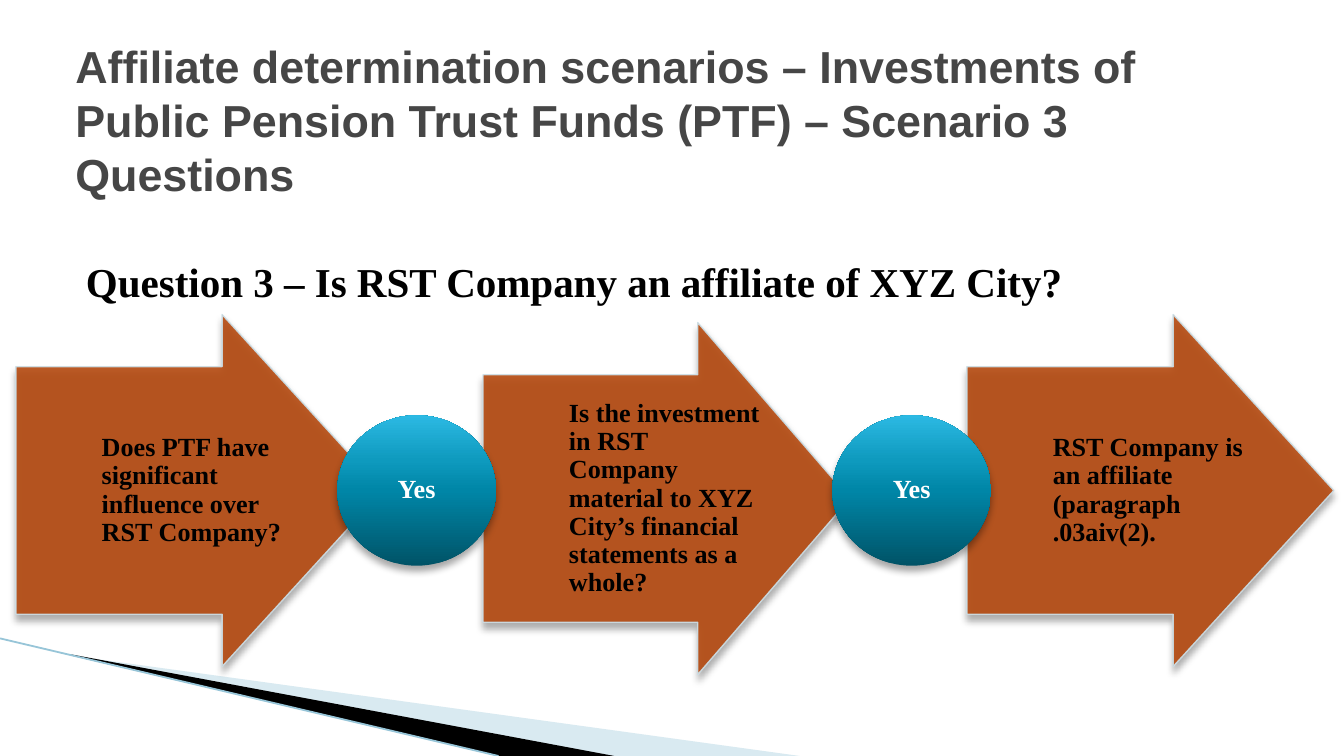
from dataclasses import dataclass

from lxml.etree import SubElement
from pptx import Presentation
from pptx.dml.color import RGBColor
from pptx.enum.shapes import MSO_CONNECTOR, MSO_SHAPE
from pptx.enum.text import MSO_ANCHOR, PP_ALIGN
from pptx.oxml import parse_xml
from pptx.oxml.ns import nsdecls, qn
from pptx.util import Pt


@dataclass(frozen=True)
class Theme:
    heading_font: str = "Arial"
    body_font: str = "Times New Roman"
    title_size: float = 24
    question_size: float = 22
    step_size: float = 14
    title: str = "464646"
    text: str = "000000"
    light_text: str = "FFFFFF"
    arrow: str = "B54A10"
    arrow_edge: str = "CDE0E8"
    pale_wedge: str = "A0CBDC"
    dark_wedge: str = "000000"
    edge_line: str = "97C5D8"
    shadow: str = "000000"
    sphere: tuple = ((0, "005367"), (50, "0086A7"), (70, "0E9ABE"), (100, "2CB9E3"))


class SlideBuilder:
    def __init__(self, slide, theme):
        self.slide = slide
        self.theme = theme

    def set_alpha(self, element, percent):
        color = next(element.iter(qn("a:srgbClr")))
        SubElement(color, qn("a:alpha")).set("val", str(percent * 1000))

    def add_shadow(self, shape):
        shape._element.spPr.append(parse_xml(
            f'<a:effectLst {nsdecls("a")}>'
            f'<a:outerShdw blurRad="{Pt(4)}" dist="{Pt(3)}" dir="5400000" rotWithShape="0">'
            f'<a:srgbClr val="{self.theme.shadow}"><a:alpha val="35000"/></a:srgbClr>'
            '</a:outerShdw></a:effectLst>'))

    def set_text(self, shape, text, font, size, color, margins, anchor=MSO_ANCHOR.TOP,
                 align=PP_ALIGN.LEFT, spacing=None):
        frame = shape.text_frame
        frame.text = text
        frame.word_wrap = True
        frame.vertical_anchor = anchor
        frame.margin_left, frame.margin_top, frame.margin_right, frame.margin_bottom = map(Pt, margins)
        paragraph = frame.paragraphs[0]
        paragraph.alignment = align
        if spacing:
            paragraph.line_spacing = spacing
        run_font = paragraph.runs[0].font
        run_font.name = font
        run_font.size = Pt(size)
        run_font.bold = True
        run_font.color.rgb = RGBColor.from_string(color)

    def text_box(self, left, top, width, height, text, font, size, color, margins):
        shape = self.slide.shapes.add_textbox(Pt(left), Pt(top), Pt(width), Pt(height))
        self.set_text(shape, text, font, size, color, margins)

    def polygon(self, points, color, opacity=100):
        corners = [(Pt(x), Pt(y)) for x, y in points]
        builder = self.slide.shapes.build_freeform(*corners[0])
        builder.add_line_segments(corners[1:], close=True)
        shape = builder.convert_to_shape()
        shape.shadow.inherit = False
        shape.fill.solid()
        shape.fill.fore_color.rgb = RGBColor.from_string(color)
        if opacity < 100:
            self.set_alpha(shape._element.spPr, opacity)
        shape.line.fill.background()
        return shape

    def line(self, start, end, color, width):
        connector = self.slide.shapes.add_connector(
            MSO_CONNECTOR.STRAIGHT, *map(Pt, (*start, *end)))
        connector.line.color.rgb = RGBColor.from_string(color)
        connector.line.width = Pt(width)
        SubElement(connector._element.spPr, qn("a:effectLst"))

    def arrow(self, left, top, shaft, text, inset):
        width, height, shoulder = 196.6, 188.6, 28
        right, bottom, neck = left + width, top + height, left + shaft
        shape = self.polygon([
            (left, top + shoulder), (neck, top + shoulder), (neck, top),
            (right, top + height / 2), (neck, bottom),
            (neck, bottom - shoulder), (left, bottom - shoulder),
        ], self.theme.arrow, 90)
        shape.line.color.rgb = RGBColor.from_string(self.theme.arrow_edge)
        shape.line.width = Pt(0.75)
        properties = shape._element.spPr
        self.set_alpha(properties.find(qn("a:ln")), 90)
        properties.remove(properties.find(qn("a:effectLst")))
        self.add_shadow(shape)
        self.set_text(shape, text, self.theme.body_font, self.theme.step_size, self.theme.text,
                      (46, inset, 47.5, inset), MSO_ANCHOR.MIDDLE, spacing=0.9)

    def answer(self, left, top, text):
        shape = self.slide.shapes.add_shape(
            MSO_SHAPE.OVAL, Pt(left), Pt(top), Pt(85), Pt(80.6))
        shape.line.fill.background()
        stops = "".join(f'<a:gs pos="{position * 1000}"><a:srgbClr val="{color}"/></a:gs>'
                        for position, color in self.theme.sphere)
        shape._element.spPr.find(qn("a:prstGeom")).addnext(parse_xml(
            f'<a:gradFill {nsdecls("a")} rotWithShape="1"><a:gsLst>{stops}</a:gsLst>'
            '<a:lin ang="16200000" scaled="0"/></a:gradFill>'))
        self.add_shadow(shape)
        self.set_text(shape, text, self.theme.body_font, self.theme.step_size,
                      self.theme.light_text, (1.5, 1.5, 1.5, 1.5), MSO_ANCHOR.MIDDLE,
                      PP_ALIGN.CENTER, 0.9)


def main():
    presentation = Presentation()
    presentation.slide_width = Pt(720)
    presentation.slide_height = Pt(405)
    theme = Theme()
    builder = SlideBuilder(presentation.slides.add_slide(presentation.slide_layouts[6]), theme)

    builder.polygon([(39.6, 351.4), (428.4, 405), (328.3, 405)], theme.pale_wedge, 40)
    builder.polygon([(38.2, 350.6), (329, 405), (267.8, 405), (38.9, 351.4)], theme.dark_wedge)
    builder.line((0, 342), (267, 405), theme.edge_line, 0.95)

    builder.text_box(
        40.4, 21, 612, 47,
        "Affiliate determination scenarios – Investments of Public Pension Trust Funds (PTF)"
        " – Scenario 3 Questions",
        theme.heading_font, theme.title_size, theme.title, (0, 0, 0, 0))
    builder.text_box(
        39, 134, 612, 260, "Question 3 – Is RST Company an affiliate of XYZ City?",
        theme.body_font, theme.question_size, theme.text, (7.2, 3.6, 7.2, 3.6))

    builder.arrow(8.5, 168.5, 110.5,
                  "Does PTF have significant influence over RST Company?", 23.8)
    builder.arrow(258.8, 172.8, 115,
                  "Is the investment in RST Company material to XYZ City’s financial"
                  " statements as a whole?", 22.3)
    builder.answer(180.7, 222.5, "Yes")
    builder.arrow(518, 168.5, 110.5,
                  "RST Company is an affiliate (paragraph .03aiv(2).", 23.8)
    builder.answer(445.9, 222.5, "Yes")

    presentation.save("out.pptx")


if __name__ == "__main__":
    main()
